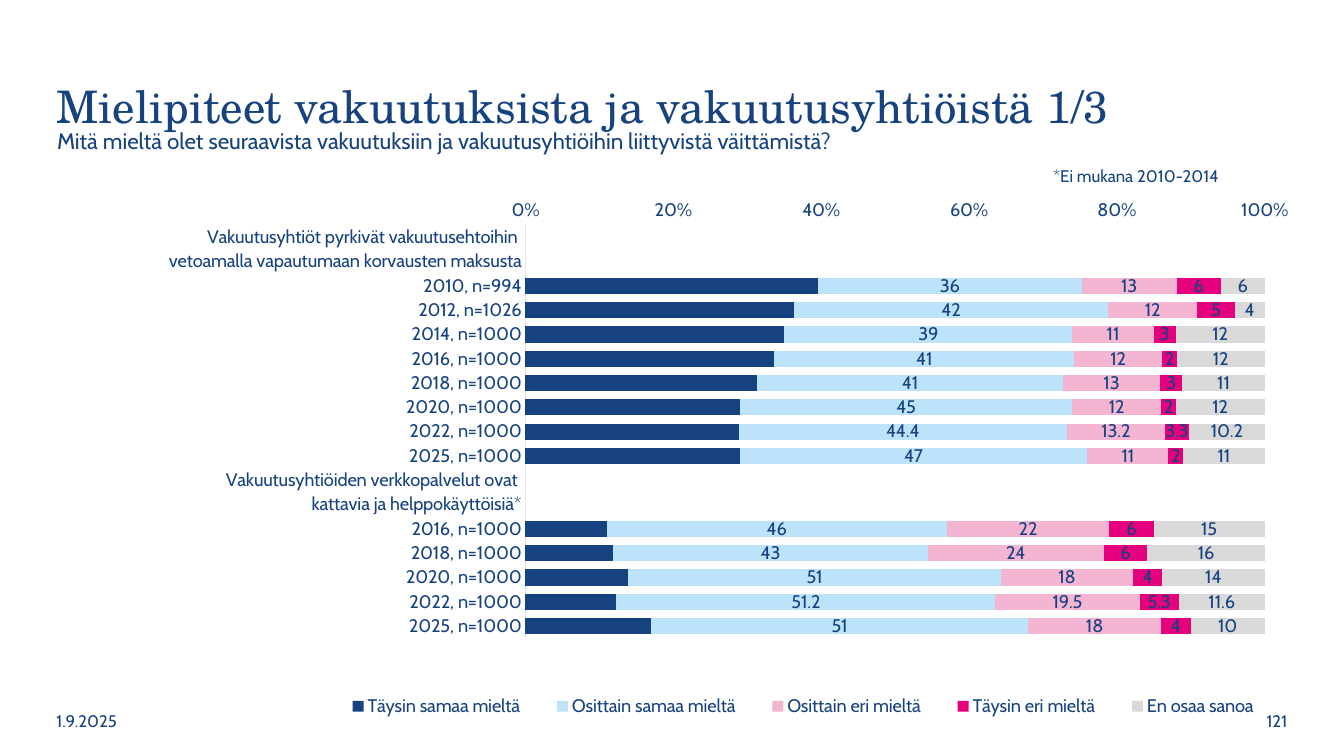
from lxml import etree
from pptx import Presentation
from pptx import util as u
from pptx.chart import data as chart_data
from pptx.dml.color import RGBColor
from pptx.enum import chart as ch, text
from pptx.oxml import ns

NAVY = RGBColor(0x16, 0x42, 0x80)
SKY = RGBColor(0xBC, 0xE3, 0xFA)
ROSE = RGBColor(0xF4, 0xB5, 0xD3)
MAGENTA = RGBColor(0xE5, 0x00, 0x7D)
GREY = RGBColor(0xD9, 0xD9, 0xD9)
AXIS_GREY = RGBColor(0xE6, 0xE6, 0xE6)

# Statements with their survey rounds: year, respondents, five answer shares
STATEMENTS = [
    (["Vakuutusyhtiöt pyrkivät vakuutusehtoihin ",
      "vetoamalla vapautumaan korvausten maksusta"],
     [(2010, 994, 40, 36, 13, 6, 6),
      (2012, 1026, 36, 42, 12, 5, 4),
      (2014, 1000, 35, 39, 11, 3, 12),
      (2016, 1000, 34, 41, 12, 2, 12),
      (2018, 1000, 31, 41, 13, 3, 11),
      (2020, 1000, 29, 45, 12, 2, 12),
      (2022, 1000, 28.8, 44.4, 13.2, 3.3, 10.2),
      (2025, 1000, 29, 47, 11, 2, 11)]),
    (["Vakuutusyhtiöiden verkkopalvelut ovat ",
      "kattavia ja helppokäyttöisiä*"],
     [(2016, 1000, 11, 46, 22, 6, 15),
      (2018, 1000, 12, 43, 24, 6, 16),
      (2020, 1000, 14, 51, 18, 4, 14),
      (2022, 1000, 12.3, 51.2, 19.5, 5.3, 11.6),
      (2025, 1000, 17, 51, 18, 4, 10)]),
]
ANSWERS = [("Täysin samaa mieltä", NAVY), ("Osittain samaa mieltä", SKY),
           ("Osittain eri mieltä", ROSE), ("Täysin eri mieltä", MAGENTA),
           ("En osaa sanoa", GREY)]


class SurveySlide:
    """Holds the style and the current slide."""
    body_font = "Cabin"
    title_font = "TeX Gyre Schola"
    color = NAVY

    def __init__(self, deck):
        self.slide = deck.slides.add_slide(deck.slide_layouts[6])

    def style(self, font, size, name=None):
        font.name = name or self.body_font
        font.size = u.Pt(size)
        font.color.rgb = self.color

    def add_text(self, words, left, top, width, height, size, name=None,
                 middle=False, align=text.PP_ALIGN.LEFT, spacing=1.0, wrap=True):
        box = self.slide.shapes.add_textbox(
            u.Cm(left), u.Cm(top), u.Cm(width), u.Cm(height))
        frame = box.text_frame
        frame.word_wrap = wrap
        frame.vertical_anchor = (text.MSO_ANCHOR.MIDDLE if middle
                                 else text.MSO_ANCHOR.TOP)
        para = frame.paragraphs[0]
        para.text = words
        para.alignment = align
        para.line_spacing = spacing
        self.style(para.font, size, name)

    def place(self, part, index, inner=False, **fractions):
        """Give a chart part a fixed place, as fractions of the chart."""
        for old in part.findall(ns.qn("c:layout")):
            part.remove(old)
        layout = etree.Element(ns.qn("c:layout"))
        manual = etree.SubElement(layout, ns.qn("c:manualLayout"))
        settings = {"layoutTarget": "inner"} if inner else {}
        settings.update(xMode="edge", yMode="edge", **fractions)
        for tag, value in settings.items():
            etree.SubElement(manual, ns.qn("c:" + tag), val=str(value))
        part.insert(index, layout)

    def add_bars(self, data, colors, left, top, width, height):
        chart = self.slide.shapes.add_chart(
            ch.XL_CHART_TYPE.BAR_STACKED_100, u.Cm(left), u.Cm(top),
            u.Cm(width), u.Cm(height), data).chart
        self.style(chart.font, 13)
        chart.has_title = False

        # Bars and their labels
        plot = chart.plots[0]
        plot.gap_width, plot.overlap = 50, 100
        plot.vary_by_categories = False
        plot.has_data_labels = True
        plot.data_labels.show_value = True
        self.style(plot.data_labels.font, 13)
        for series, color in zip(plot.series, colors):
            series.format.fill.solid()
            series.format.fill.fore_color.rgb = color

        # Axes
        rounds, shares = chart.category_axis, chart.value_axis
        for axis in (rounds, shares):
            axis.major_tick_mark = axis.minor_tick_mark = ch.XL_TICK_MARK.NONE
            axis.has_major_gridlines = False
        rounds.reverse_order = True
        rounds.crosses = ch.XL_AXIS_CROSSES.MAXIMUM
        rounds.format.line.color.rgb = AXIS_GREY
        rounds.format.line.width = u.Pt(0.75)
        shares.major_unit = 0.2
        shares.tick_labels.number_format = "0%"
        shares.tick_labels.number_format_is_linked = False
        shares.format.line.fill.background()

        # Legend and placing
        chart.has_legend = True
        chart.legend.position = ch.XL_LEGEND_POSITION.BOTTOM
        chart.legend.include_in_layout = False
        root = chart.element.find(ns.qn("c:chart"))
        self.place(root.find(ns.qn("c:plotArea")), 0, inner=True,
                   x=0.383, y=0.06, w=0.591, h=0.743)
        self.place(root.find(ns.qn("c:legend")), 1,
                   x=0.22, y=0.89, w=0.77, h=0.07)


def survey_data():
    data = chart_data.CategoryChartData()
    rows = []
    for heading, rounds in STATEMENTS:
        rows += [(line, [None] * len(ANSWERS)) for line in heading]
        rows += [(f"{year}, n={count}", shares) for year, count, *shares in rounds]
    data.categories = [label for label, _ in rows]
    for index, (answer, _) in enumerate(ANSWERS):
        data.add_series(answer, [shares[index] for _, shares in rows])
    return data


def main():
    deck = Presentation()
    deck.slide_width, deck.slide_height = u.Cm(33.87), u.Cm(19.05)
    page = SurveySlide(deck)

    # Headings
    page.add_text("Mielipiteet vakuutuksista ja vakuutusyhtiöistä 1/3",
                  1.17, 1.52, 29.36, 2.44, 32, page.title_font,
                  middle=True, spacing=0.9)
    page.add_text("Mitä mieltä olet seuraavista vakuutuksiin ja "
                  "vakuutusyhtiöihin liittyvistä väittämistä?",
                  1.19, 3.07, 30, 0.94, 16)
    page.add_text("*Ei mukana 2010-2014", 26.29, 4.06, 5.46, 0.76, 12, wrap=False)

    # Survey chart
    page.add_bars(survey_data(), [color for _, color in ANSWERS],
                  1.17, 4.83, 31.52, 14.02)

    # Footer
    page.add_text("1.9.2025", 1.17, 17.65, 3, 1.02, 12, middle=True)
    page.add_text("121", 29.69, 17.65, 3, 1.02, 12, middle=True,
                  align=text.PP_ALIGN.RIGHT)
    deck.save("out.pptx")


if __name__ == "__main__":
    main()
